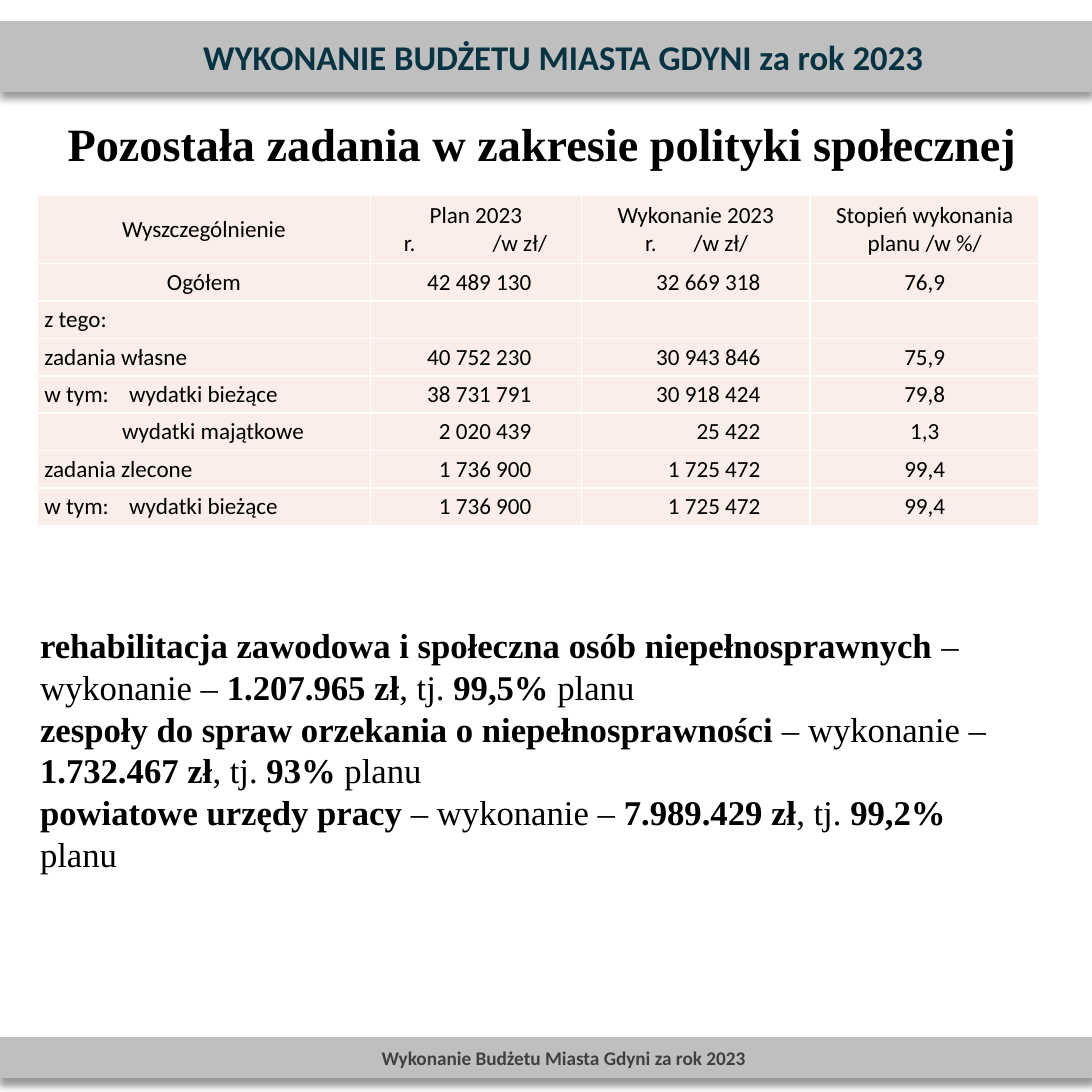
import pptx
import pptx.dml.color
import pptx.enum.shapes
import pptx.enum.text
import pptx.oxml
import pptx.oxml.ns
import pptx.util

Inches, Pt = pptx.util.Inches, pptx.util.Pt
RGBColor = pptx.dml.color.RGBColor
ALIGN = pptx.enum.text.PP_ALIGN
MIDDLE = pptx.enum.text.MSO_ANCHOR.MIDDLE
NS = pptx.oxml.ns.nsdecls("a")

BAR_GREY = RGBColor(0xBF, 0xBF, 0xBF)
HEADER_TEAL = RGBColor(0x08, 0x33, 0x43)
FOOTER_GREY = RGBColor(0x40, 0x40, 0x40)
CELL_PEACH = RGBColor(0xFB, 0xEE, 0xE8)
BLACK = RGBColor(0, 0, 0)
WHITE = RGBColor(0xFF, 0xFF, 0xFF)

SIDE = 7.87
NUMBER_INDENT = 0.36

# Each table cell holds its lines; a tab moves to the row's or cell's tab stops
HEADINGS = ["Wyszczególnienie", "Plan 2023\n\tr.\t/w zł/",
            "Wykonanie 2023\n\tr.\t/w zł/", "Stopień wykonania planu /w %/"]
ROWS = [
    ["Ogółem", "42 489 130", "32 669 318", "76,9"],
    ["z tego:", "", "", ""],
    ["zadania własne", "40 752 230", "30 943 846", "75,9"],
    ["w tym:\twydatki bieżące", "38 731 791", "30 918 424", "79,8"],
    ["\twydatki majątkowe", "2 020 439", "25 422", "1,3"],
    ["zadania zlecone", "1 736 900", "1 725 472", "99,4"],
    ["w tym:\twydatki bieżące", "1 736 900", "1 725 472", "99,4"],
]
HEADING_TABS = {1: (0.19, 0.83), 2: (0.41, 0.76)}
LABEL_TAB, SUBLABEL_TAB = 0.61, 0.56

TASKS = [
    ("rehabilitacja zawodowa i społeczna osób niepełnosprawnych", "1.207.965 zł", "99,5%"),
    ("zespoły do spraw orzekania o niepełnosprawności", "1.732.467 zł", "93%"),
    ("powiatowe urzędy pracy", "7.989.429 zł", "99,2%"),
]


class BudgetSlide:
    sans, serif = "Calibri", "Times New Roman"

    def __init__(self, prs):
        self.s = prs.slides.add_slide(prs.slide_layouts[5])

    def style(self, p, name, size, color=BLACK, bold=None, align=ALIGN.LEFT):
        p.alignment = align
        font = p.font
        font.name, font.size, font.bold = name, Pt(size), bold
        font.color.rgb = color

    def bar(self, top, height, text, size, color):
        sp = self.s.shapes.add_shape(pptx.enum.shapes.MSO_SHAPE.RECTANGLE, 0,
                                     Inches(top), Inches(SIDE), Inches(height))
        sp.fill.solid()
        sp.fill.fore_color.rgb = BAR_GREY
        sp.line.color.rgb = BAR_GREY
        sp.line.width = Pt(1)
        sp.shadow.inherit = False
        effects = sp._element.spPr.find(pptx.oxml.ns.qn("a:effectLst"))
        effects.append(pptx.oxml.parse_xml(
            f'<a:outerShdw {NS} blurRad="{Pt(4)}" dist="{Pt(3)}" dir="5400000" '
            'algn="t" rotWithShape="0"><a:srgbClr val="000000">'
            '<a:alpha val="40000"/></a:srgbClr></a:outerShdw>'))
        tf = sp.text_frame
        tf.margin_left = Inches(0.35)
        tf.vertical_anchor = MIDDLE
        tf.text = text
        self.style(tf.paragraphs[0], self.sans, size, color, True, ALIGN.CENTER)

    def title(self, text, left, top, width, height):
        sp = self.s.shapes.title
        sp.left, sp.top = Inches(left), Inches(top)
        sp.width, sp.height = Inches(width), Inches(height)
        tf = sp.text_frame
        tf.text = text
        tf.auto_size = pptx.enum.text.MSO_AUTO_SIZE.NONE
        tf.vertical_anchor = pptx.enum.text.MSO_ANCHOR.TOP
        self.style(tf.paragraphs[0], self.serif, 24, BLACK, True, ALIGN.CENTER)

    def tasks(self, tasks, left, top, width, height):
        tf = self.s.shapes.add_textbox(Inches(left), Inches(top),
                                       Inches(width), Inches(height)).text_frame
        tf.word_wrap = True
        for i, (task, amount, share) in enumerate(tasks):
            p = tf.paragraphs[0] if i == 0 else tf.add_paragraph()
            self.style(p, self.serif, 18)
            parts = [task, " – wykonanie – ", amount, ", tj. ", share, " planu"]
            for j, part in enumerate(parts):
                r = p.add_run()
                r.text = part
                r.font.bold = j % 2 == 0

    def cell(self, cell, text, align, tabs=(), right=0.05):
        cell.margin_left, cell.margin_right = Inches(0.05), Inches(right)
        cell.margin_top = cell.margin_bottom = Inches(0.02)
        cell.vertical_anchor = MIDDLE
        tcPr = cell._tc.get_or_add_tcPr()
        for side in "LRTB":
            tcPr.append(pptx.oxml.parse_xml(
                f'<a:ln{side} {NS} w="{Pt(1)}"><a:solidFill>'
                f'<a:srgbClr val="{WHITE}"/></a:solidFill></a:ln{side}>'))
        cell.fill.solid()
        cell.fill.fore_color.rgb = CELL_PEACH
        cell.text_frame.text = text
        for p in cell.text_frame.paragraphs:
            tabbed = "\t" in p.text
            if tabbed:
                stops = "".join(f'<a:tab pos="{Inches(t)}" algn="l"/>' for t in tabs)
                p._p.get_or_add_pPr().append(
                    pptx.oxml.parse_xml(f"<a:tabLst {NS}>{stops}</a:tabLst>"))
            self.style(p, self.sans, 12, align=ALIGN.LEFT if tabbed else align)
            if not text:
                p._p.get_or_add_endParaRPr().set("sz", "1200")

    def table(self, left, top, widths, heights):
        t = self.s.shapes.add_table(len(heights), len(widths), Inches(left), Inches(top),
                                    Inches(sum(widths)), Inches(sum(heights))).table
        t.first_row = t.horz_banding = False
        for column, width in zip(t.columns, widths):
            column.width = Inches(width)
        for row, height in zip(t.rows, heights):
            row.height = Inches(height)
        for c, text in enumerate(HEADINGS):
            self.cell(t.cell(0, c), text, ALIGN.CENTER, HEADING_TABS.get(c, ()))
        for i, (label, plan, done, share) in enumerate(ROWS, 1):
            tab = SUBLABEL_TAB if label.startswith("\t") else LABEL_TAB
            self.cell(t.cell(i, 0), label, ALIGN.CENTER if i == 1 else ALIGN.LEFT, [tab])
            for c, number in enumerate((plan, done), 1):
                self.cell(t.cell(i, c), number, ALIGN.RIGHT, right=NUMBER_INDENT)
            self.cell(t.cell(i, 3), share, ALIGN.CENTER)


def main():
    prs = pptx.Presentation()
    prs.slide_width = prs.slide_height = Inches(SIDE)
    slide = BudgetSlide(prs)

    # Footer and header bars
    slide.bar(7.48, 0.28, "Wykonanie Budżetu Miasta Gdyni za rok 2023", 10, FOOTER_GREY)
    slide.bar(0.16, 0.5, "WYKONANIE BUDŻETU MIASTA GDYNI za rok 2023", 18, HEADER_TEAL)

    # Title, task list and budget table
    slide.title("Pozostała zadania w zakresie polityki społecznej", 0.19, 0.78, 7.43, 0.5)
    slide.tasks(TASKS, 0.19, 4.45, 7.31, 1.92)
    slide.table(0.27, 1.41, [2.4, 1.52, 1.65, 1.65], [0.49] + [0.27] * len(ROWS))

    prs.save("out.pptx")


if __name__ == "__main__":
    main()
